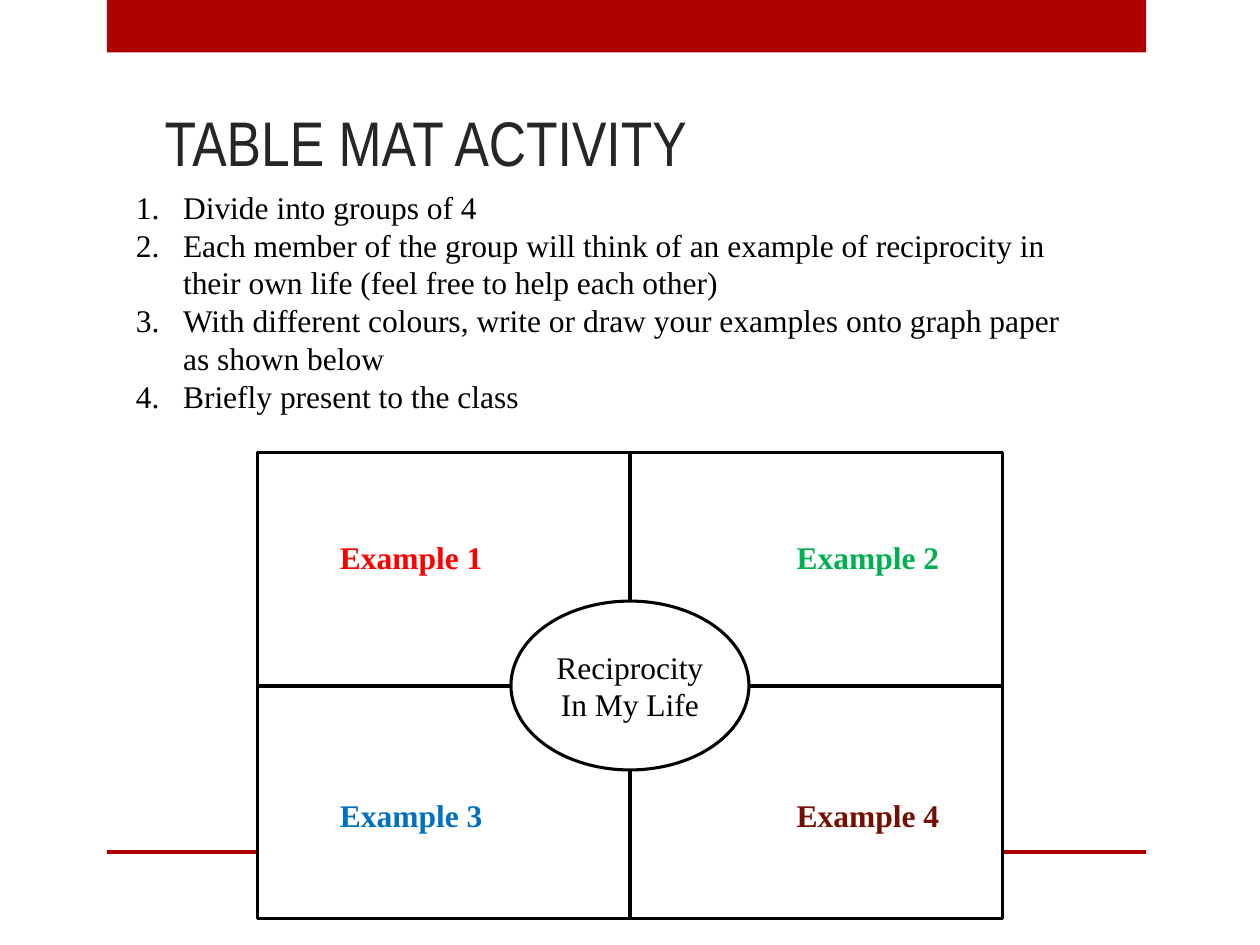
from dataclasses import dataclass

from lxml import etree
from pptx import Presentation
from pptx.dml.color import RGBColor
from pptx.enum.shapes import MSO_CONNECTOR as Connector, MSO_SHAPE as Shape
from pptx.enum.text import MSO_ANCHOR as Anchor, PP_ALIGN as Align
from pptx.oxml.ns import qn
from pptx.util import Pt


@dataclass(frozen=True)
class Theme:
    band: str = "AD0101"
    heading: str = "262626"
    ink: str = "000000"
    paper: str = "FFFFFF"
    examples: tuple = ("FF0000", "00B050", "0070C0", "730E00")
    heading_font: str = "Arial Narrow"
    body_font: str = "Times New Roman"
    heading_size: float = 36
    body_size: float = 18
    outline: float = 1.75
    divider: float = 2.25


theme = Theme()
prs = Presentation()
prs.slide_width, prs.slide_height = Pt(720), Pt(540)
slide = prs.slides.add_slide(prs.slide_layouts[6])
shapes = slide.shapes


def add_text(lines, left, top, width, height, *, size=theme.body_size,
             font=theme.body_font, color=theme.ink, bold=False,
             align=Align.LEFT, anchor=Anchor.TOP, numbered=False):
    frame = shapes.add_textbox(Pt(left), Pt(top), Pt(width), Pt(height)).text_frame
    frame.word_wrap = True
    frame.vertical_anchor = anchor
    frame.text = "\n".join(lines)
    for paragraph in frame.paragraphs:
        paragraph.alignment = align
        paragraph.font.size = Pt(size)
        paragraph.font.name = font
        paragraph.font.bold = bold
        paragraph.font.color.rgb = RGBColor.from_string(color)
        if numbered:
            props = paragraph._p.get_or_add_pPr()
            props.set("marL", str(Pt(27)))
            props.set("indent", str(Pt(-27)))
            number = etree.Element(qn("a:buAutoNum"), type="arabicPeriod")
            props.insert_element_before(number, "a:tabLst", "a:defRPr", "a:extLst")


def add_block(kind, left, top, width, height, fill, outlined=False):
    block = shapes.add_shape(kind, Pt(left), Pt(top), Pt(width), Pt(height))
    block.shadow.inherit = False
    block.fill.solid()
    block.fill.fore_color.rgb = RGBColor.from_string(fill)
    if outlined:
        block.line.color.rgb = RGBColor.from_string(theme.ink)
        block.line.width = Pt(theme.outline)
    else:
        block.line.fill.background()


# Header band and footer rule
for top, height in ((0, 30), (485.75, 2.25)):
    add_block(Shape.RECTANGLE, 61, top, 594, height, theme.band)

add_text(["TABLE MAT ACTIVITY"], 87, 19.5, 534, 86.5, size=theme.heading_size,
         font=theme.heading_font, color=theme.heading, anchor=Anchor.BOTTOM)

add_text([
    "Divide into groups of 4",
    "Each member of the group will think of an example of reciprocity in "
    "their own life (feel free to help each other)",
    "With different colours, write or draw your examples onto graph paper "
    "as shown below",
    "Briefly present to the class",
], 70.5, 103.75, 550, 138, numbered=True)

# Table mat: four quarters around a central oval
mat_left, mat_top, mat_width, mat_height = 147.25, 258.5, 425.5, 266.5
center_x, center_y = mat_left + mat_width / 2, mat_top + mat_height / 2
add_block(Shape.RECTANGLE, mat_left, mat_top, mat_width, mat_height,
          theme.paper, outlined=True)

for ends in ((center_x, mat_top, center_x, mat_top + mat_height),
             (mat_left, center_y, mat_left + mat_width, center_y)):
    divider = shapes.add_connector(Connector.STRAIGHT, *map(Pt, ends))
    divider.line.color.rgb = RGBColor.from_string(theme.ink)
    divider.line.width = Pt(theme.divider)
    etree.SubElement(divider._element.spPr, qn("a:effectLst"))

oval_width, oval_height = 136, 96.5
add_block(Shape.OVAL, center_x - oval_width / 2, center_y - oval_height / 2,
          oval_width, oval_height, theme.paper, outlined=True)
topic_width, topic_height = 102, 51
add_text(["Reciprocity", "In My Life"], center_x - topic_width / 2,
         366.5, topic_width, topic_height, align=Align.CENTER)

for index, color in enumerate(theme.examples):
    row, column = divmod(index, 2)
    add_text([f"Example {index + 1}"], 161.25 + column * 261, 304 + row * 147.5,
             147.5, 29, color=color, bold=True, align=Align.CENTER)

prs.save("out.pptx")
